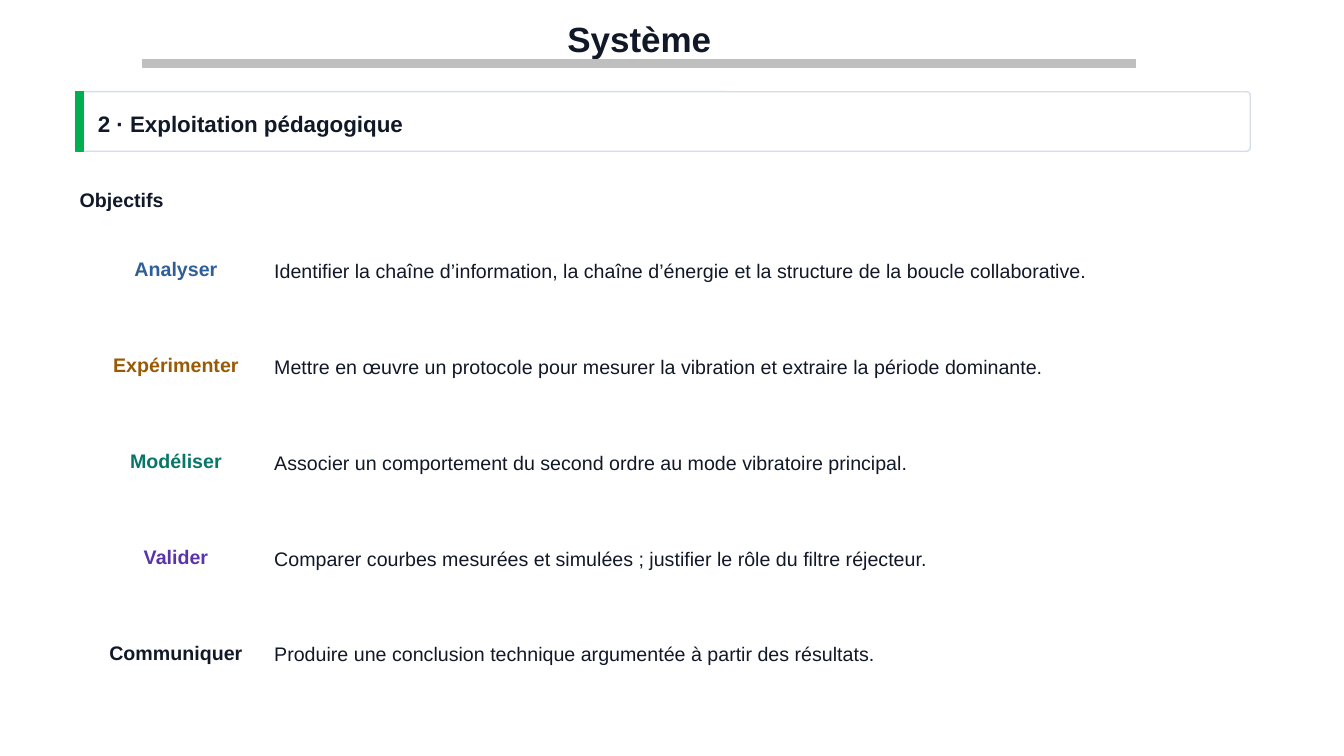
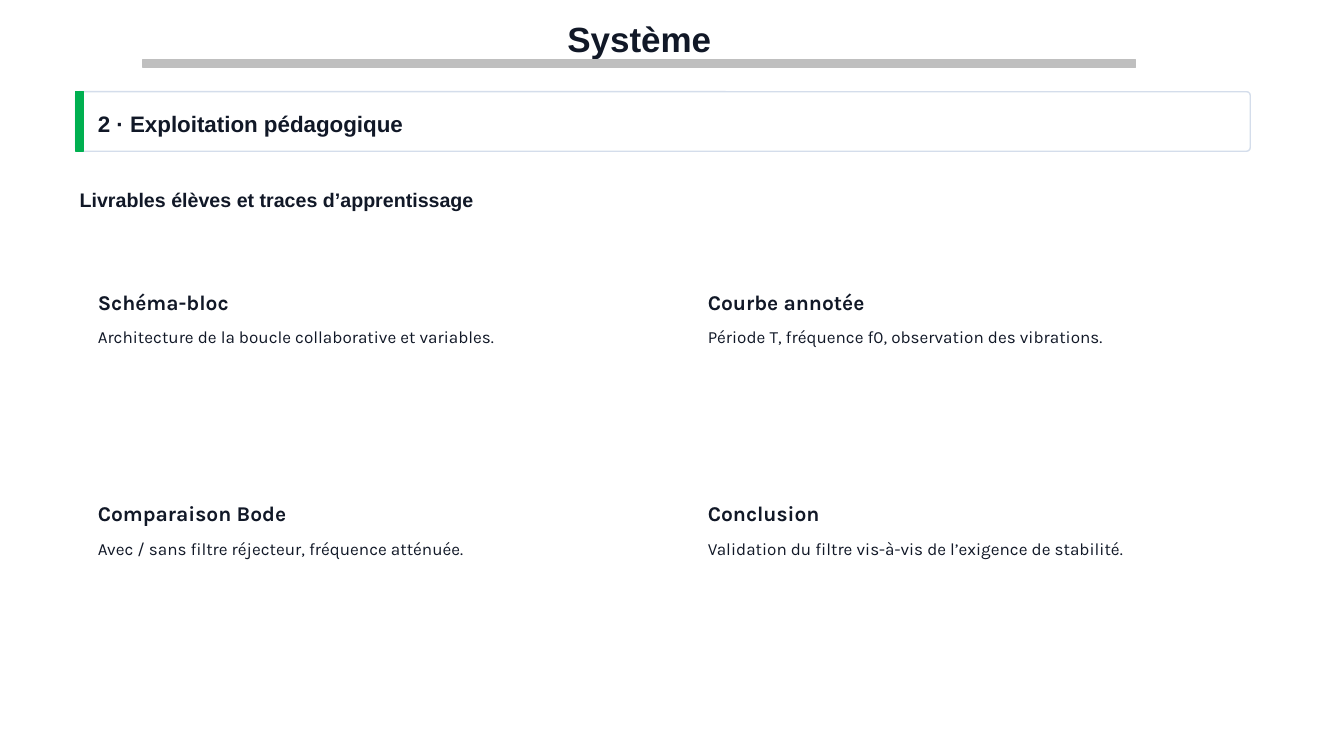
from dataclasses import dataclass

from pptx import Presentation
from pptx.dml.color import RGBColor
from pptx.enum.shapes import MSO_SHAPE
from pptx.enum.text import MSO_ANCHOR, MSO_AUTO_SIZE, PP_ALIGN
from pptx.shapes.autoshape import Shape
from pptx.slide import Slide
from pptx.util import Inches, Pt


@dataclass(frozen=True)
class Theme:
    heading_font: str = "Arial"
    card_font: str = "Karla"
    ink: str = "111827"
    white: str = "FFFFFF"
    rule: str = "BFBFBF"
    border: str = "D4DDEB"
    accent: str = "00B050"
    blue: str = "2F5F98"
    amber: str = "9A5A05"
    teal: str = "08776A"
    violet: str = "5B35A8"
    title_size: float = 25
    section_size: float = 16
    body_size: float = 14
    card_title_size: float = 15
    card_body_size: float = 12.2


THEME = Theme()


@dataclass(frozen=True)
class Box:
    left: float
    top: float
    width: float
    height: float

    def lengths(self) -> tuple[int, int, int, int]:
        return (Inches(self.left), Inches(self.top),
                Inches(self.width), Inches(self.height))


@dataclass(frozen=True)
class TextStyle:
    size: float
    bold: bool = False
    font: str = THEME.heading_font
    color: str = THEME.ink
    align: PP_ALIGN = PP_ALIGN.LEFT
    anchor: MSO_ANCHOR = MSO_ANCHOR.MIDDLE


@dataclass(frozen=True)
class Objective:
    verb: str
    color: str
    description: str


@dataclass(frozen=True)
class Deliverable:
    name: str
    description: str


# Content
TITLE = "Système"
SECTION = "2 · Exploitation pédagogique"
OBJECTIVES = (
    Objective("Analyser", THEME.blue,
              "Identifier la chaîne d’information, la chaîne d’énergie "
              "et la structure de la boucle collaborative."),
    Objective("Expérimenter", THEME.amber,
              "Mettre en œuvre un protocole pour mesurer la vibration "
              "et extraire la période dominante."),
    Objective("Modéliser", THEME.teal,
              "Associer un comportement du second ordre au mode vibratoire principal."),
    Objective("Valider", THEME.violet,
              "Comparer courbes mesurées et simulées ; "
              "justifier le rôle du filtre réjecteur."),
    Objective("Communiquer", THEME.ink,
              "Produire une conclusion technique argumentée à partir des résultats."),
)
DELIVERABLES = (
    Deliverable("Schéma-bloc", "Architecture de la boucle collaborative et variables."),
    Deliverable("Courbe annotée", "Période T, fréquence f0, observation des vibrations."),
    Deliverable("Comparaison Bode", "Avec / sans filtre réjecteur, fréquence atténuée."),
    Deliverable("Conclusion", "Validation du filtre vis-à-vis de l’exigence de stabilité."),
)

# Text styles and grids
TITLE_STYLE = TextStyle(THEME.title_size, bold=True, align=PP_ALIGN.CENTER)
SECTION_STYLE = TextStyle(THEME.section_size, bold=True)
SUBHEADING_STYLE = TextStyle(THEME.body_size, bold=True)
DESCRIPTION_STYLE = TextStyle(THEME.body_size)
CARD_TITLE_STYLE = TextStyle(THEME.card_title_size, bold=True, font=THEME.card_font)
CARD_BODY_STYLE = TextStyle(THEME.card_body_size, font=THEME.card_font,
                            anchor=MSO_ANCHOR.TOP)
OBJECTIVE_TOP, OBJECTIVE_PITCH = 2.46, 0.95
CARD_LEFT, CARD_TOP = 0.97, 2.82
CARD_COLUMNS, CARD_COLUMN_PITCH, CARD_ROW_PITCH = 2, 6.05, 2.1


# Drawing helpers
def write(shape: Shape, text: str, style: TextStyle) -> None:
    frame = shape.text_frame
    frame.word_wrap = True
    frame.auto_size = MSO_AUTO_SIZE.NONE
    frame.vertical_anchor = style.anchor
    frame.margin_left = frame.margin_right = 0
    frame.margin_top = frame.margin_bottom = 0
    frame.text = text
    paragraph = frame.paragraphs[0]
    paragraph.alignment = style.align
    paragraph.font.name = style.font
    paragraph.font.size = Pt(style.size)
    paragraph.font.bold = style.bold
    paragraph.font.color.rgb = RGBColor.from_string(style.color)


def add_text(shapes, box: Box, text: str, style: TextStyle) -> None:
    write(shapes.add_textbox(*box.lengths()), text, style)


def add_panel(shapes, box: Box, fill: str, line: str,
              preset: MSO_SHAPE = MSO_SHAPE.RECTANGLE) -> Shape:
    panel = shapes.add_shape(preset, *box.lengths())
    panel.shadow.inherit = False
    panel.fill.solid()
    panel.fill.fore_color.rgb = RGBColor.from_string(fill)
    panel.line.color.rgb = RGBColor.from_string(line)
    panel.line.width = Pt(1)
    return panel


# Slide parts
def add_section_slide(deck, subheading: str) -> Slide:
    slide = deck.slides.add_slide(deck.slide_layouts.get_by_name("Title Only"))

    # Title and its rule
    title = slide.shapes.title
    title.left, title.top, title.width, title.height = Box(1.42, 0.14, 9.84, 0.48).lengths()
    write(title, TITLE, TITLE_STYLE)
    add_panel(slide.shapes, Box(1.42, 0.59, 9.84, 0.08), THEME.rule, THEME.rule)

    # Section banner
    banner = slide.shapes.add_group_shape().shapes
    frame = add_panel(banner, Box(0.75, 0.91, 11.65, 0.59), THEME.white, THEME.border,
                      MSO_SHAPE.ROUNDED_RECTANGLE)
    frame.adjustments[0] = 0.06
    add_panel(banner, Box(0.75, 0.91, 0.08, 0.59), THEME.accent, THEME.accent)
    add_text(banner, Box(0.97, 1.05, 5.35, 0.35), SECTION, SECTION_STYLE)

    add_text(slide.shapes, Box(0.79, 1.81, 5.15, 0.35), subheading, SUBHEADING_STYLE)
    return slide


def add_objective(slide: Slide, objective: Objective, row: int) -> None:
    top = OBJECTIVE_TOP + row * OBJECTIVE_PITCH
    verb_style = TextStyle(THEME.body_size, bold=True, color=objective.color,
                           align=PP_ALIGN.CENTER)
    add_text(slide.shapes, Box(1.02, top + 0.05, 1.45, 0.32), objective.verb, verb_style)
    add_text(slide.shapes, Box(2.72, top, 9.6, 0.46), objective.description,
             DESCRIPTION_STYLE)


def add_deliverable(slide: Slide, deliverable: Deliverable, index: int) -> None:
    row, column = divmod(index, CARD_COLUMNS)
    left = CARD_LEFT + column * CARD_COLUMN_PITCH
    top = CARD_TOP + row * CARD_ROW_PITCH
    add_text(slide.shapes, Box(left, top, 5.2, 0.35), deliverable.name, CARD_TITLE_STYLE)
    add_text(slide.shapes, Box(left, top + 0.42, 5.2, 0.77), deliverable.description,
             CARD_BODY_STYLE)


def main() -> None:
    deck = Presentation()
    deck.slide_width, deck.slide_height = Inches(13.33), Inches(7.5)

    # Objectives
    objectives_slide = add_section_slide(deck, "Objectifs")
    for row, objective in enumerate(OBJECTIVES):
        add_objective(objectives_slide, objective, row)

    # Deliverables
    deliverables_slide = add_section_slide(deck, "Livrables élèves et traces d’apprentissage")
    for index, deliverable in enumerate(DELIVERABLES):
        add_deliverable(deliverables_slide, deliverable, index)

    deck.save("out.pptx")


if __name__ == "__main__":
    main()
